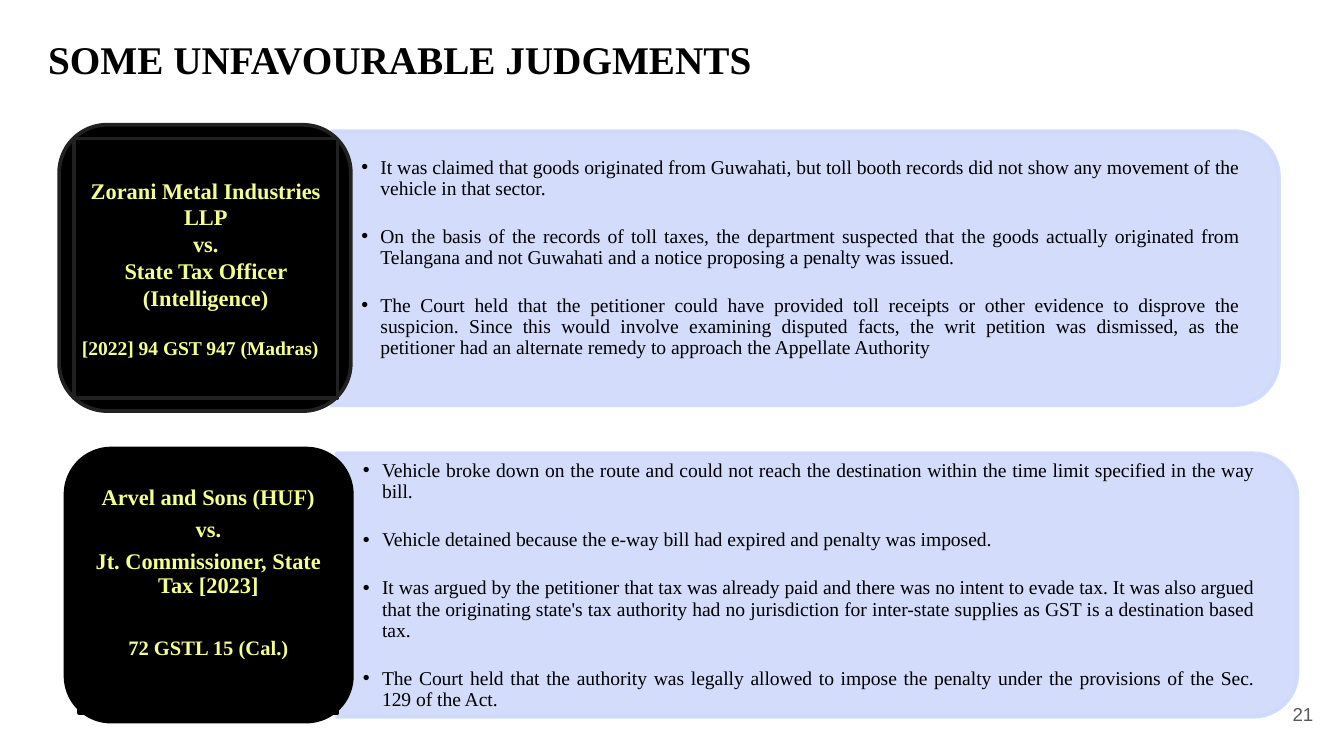
from lxml import etree
from pptx import Presentation
from pptx.dml.color import RGBColor
from pptx.enum.shapes import MSO_SHAPE
from pptx.enum.text import MSO_ANCHOR, MSO_AUTO_SIZE, PP_ALIGN
from pptx.oxml.ns import qn
from pptx.util import Cm, Pt

TOP, MIDDLE = MSO_ANCHOR.TOP, MSO_ANCHOR.MIDDLE
LEFT, CENTER, RIGHT, JUSTIFY = PP_ALIGN.LEFT, PP_ALIGN.CENTER, PP_ALIGN.RIGHT, PP_ALIGN.JUSTIFY
NO_AUTO_SIZE = MSO_AUTO_SIZE.NONE
ROUNDED, RECTANGLE, ROUNDED_END = (
    MSO_SHAPE.ROUNDED_RECTANGLE, MSO_SHAPE.RECTANGLE, MSO_SHAPE.ROUND_2_SAME_RECTANGLE)

BLACK = RGBColor(0x00, 0x00, 0x00)
CHARCOAL = RGBColor(0x21, 0x21, 0x21)
GRAY = RGBColor(0x59, 0x59, 0x59)
LAVENDER = RGBColor(0xCF, 0xD9, 0xFB)
YELLOW = RGBColor(0xF5, 0xFF, 0x8D)
SERIF, SANS = "Times New Roman", "Arial"

CASES = [
    {
        "panel": (6.26, 2.48, 17.91, 5.18),
        "list": (6.32, 2.97, 17.63, 4.67),
        "plate": (1.12, 2.36, 5.51, 5.41),
        "label": (1.4, 2.62, 4.98, 4.9),
        "outline": CHARCOAL,
        "bottom_inset": 0.08,
        "name_format": {},
        "names": ["Zorani Metal Industries LLP", "vs.", "State Tax Officer (Intelligence)"],
        "citation": "[2022] 94 GST 947 (Madras)",
        "citation_format": {"size": 10.5, "align": LEFT, "before": 13.5},
        "points": [
            "It was claimed that goods originated from Guwahati, but toll booth records did not "
            "show any movement of the vehicle in that sector.",
            "On the basis of the records of toll taxes, the department suspected that the goods "
            "actually originated from Telangana and not Guwahati and a notice proposing a penalty "
            "was issued.",
            "The Court held that the petitioner could have provided toll receipts or other evidence "
            "to disprove the suspicion. Since this would involve examining disputed facts, the writ "
            "petition was dismissed, as the petitioner had an alternate remedy to approach the "
            "Appellate Authority",
        ],
    },
    {
        "panel": (6.36, 8.57, 18.16, 4.98),
        "list": (6.35, 8.71, 17.88, 4.6),
        "plate": (1.24, 8.48, 5.41, 5.16),
        "label": (1.5, 8.81, 4.88, 4.67),
        "outline": BLACK,
        "bottom_inset": 0.7,
        "name_format": {"spacing": 0.9, "after": 4.2},
        "names": ["Arvel and Sons (HUF)", "vs.", "Jt. Commissioner, State Tax [2023]"],
        "citation": "72 GSTL 15 (Cal.)",
        "citation_format": {"size": 11, "spacing": 0.9, "before": 17},
        "points": [
            "Vehicle broke down on the route and could not reach the destination within the time "
            "limit specified in the way bill.",
            "Vehicle detained because the e-way bill had expired and penalty was imposed.",
            "It was argued by the petitioner that tax was already paid and there was no intent to "
            "evade tax. It was also argued that the originating state's tax authority had no "
            "jurisdiction for inter-state supplies as GST is a destination based tax.",
            "The Court held that the authority was legally allowed to impose the penalty under the "
            "provisions of the Sec. 129 of the Act.",
        ],
    },
]


def place(shape, box):
    shape.left, shape.top, shape.width, shape.height = map(Cm, box)


def prepare_frame(shape, anchor, insets):
    frame = shape.text_frame
    frame.word_wrap = True
    frame.auto_size = NO_AUTO_SIZE
    frame.vertical_anchor = anchor
    frame.margin_left, frame.margin_top, frame.margin_right, frame.margin_bottom = map(Cm, insets)
    return frame


def add_text(frame, text, size=12, font=SERIF, color=BLACK, bold=False, align=LEFT,
             spacing=1.0, before=0, after=0):
    first = frame.paragraphs[0]
    paragraph = frame.add_paragraph() if first.runs else first
    paragraph.alignment = align
    paragraph.line_spacing = spacing
    paragraph.space_before = Pt(before)
    paragraph.space_after = Pt(after)
    run = paragraph.add_run()
    run.text = text
    run.font.size = Pt(size)
    run.font.name = font
    run.font.bold = bold
    run.font.color.rgb = color
    return paragraph


def add_bullet(paragraph):
    properties = paragraph._p.get_or_add_pPr()
    properties.set("marL", str(Cm(0.36)))
    properties.set("indent", str(Cm(-0.36)))
    etree.SubElement(properties, qn("a:buFont")).set("typeface", SANS)
    etree.SubElement(properties, qn("a:buChar")).set("char", "•")


def add_block(slide, kind, box, fill, outline):
    shape = slide.shapes.add_shape(kind, *map(Cm, box))
    shape.shadow.inherit = False
    shape.fill.solid()
    shape.fill.fore_color.rgb = fill
    shape.line.color.rgb = outline
    shape.line.width = Pt(2)
    return shape


def add_panel(slide, box):
    left, top, width, height = box
    shift = (width - height) / 2
    upright = (left + shift, top - shift, height, width)
    panel = add_block(slide, ROUNDED_END, upright, LAVENDER, LAVENDER)
    panel.rotation = 90
    for color in panel.element.spPr.iter(qn("a:srgbClr")):
        etree.SubElement(color, qn("a:alpha")).set("val", "90000")


def fill_list(placeholder, box, points):
    tree = placeholder.element.getparent()
    tree.append(placeholder.element)
    place(placeholder, box)
    frame = prepare_frame(placeholder, TOP, (0.51, 0, 0.51, 0))
    for index, point in enumerate(points):
        before = 14.4 if index else 0
        add_bullet(add_text(frame, point, size=10.5, align=JUSTIFY, spacing=0.9, before=before))


def add_label(slide, case):
    add_block(slide, ROUNDED, case["plate"], BLACK, case["outline"])
    label = add_block(slide, RECTANGLE, case["label"], BLACK, case["outline"])
    frame = prepare_frame(label, MIDDLE, (0.15, 0.08, 0.15, case["bottom_inset"]))
    shared = {"color": YELLOW, "bold": True, "align": CENTER}
    for name in case["names"]:
        add_text(frame, name, **shared, **case["name_format"])
    add_text(frame, case["citation"], **{**shared, **case["citation_format"]})


def add_title(slide, text):
    title = slide.shapes.title
    place(title, (0.66, 0.53, 21.23, 1.09))
    frame = prepare_frame(title, TOP, (0.25, 0.13, 0.25, 0.13))
    add_text(frame, text, size=21, bold=True)


def add_page_number(slide, text):
    box = slide.shapes.add_textbox(*map(Cm, (23.55, 12.95, 1.52, 1.09)))
    frame = prepare_frame(box, MIDDLE, (0.25, 0.25, 0.25, 0.25))
    add_text(frame, text, size=10, font=SANS, color=GRAY, align=RIGHT)


def main():
    presentation = Presentation()
    presentation.slide_width = Cm(25.4)
    presentation.slide_height = Cm(14.29)
    slide = presentation.slides.add_slide(presentation.slide_layouts[3])
    add_title(slide, "SOME UNFAVOURABLE JUDGMENTS")
    bodies = [slide.placeholders[1], slide.placeholders[2]]
    for case, body in zip(CASES, bodies):
        add_panel(slide, case["panel"])
        fill_list(body, case["list"], case["points"])
        add_label(slide, case)
    add_page_number(slide, "21")
    presentation.save("out.pptx")


if __name__ == "__main__":
    main()
